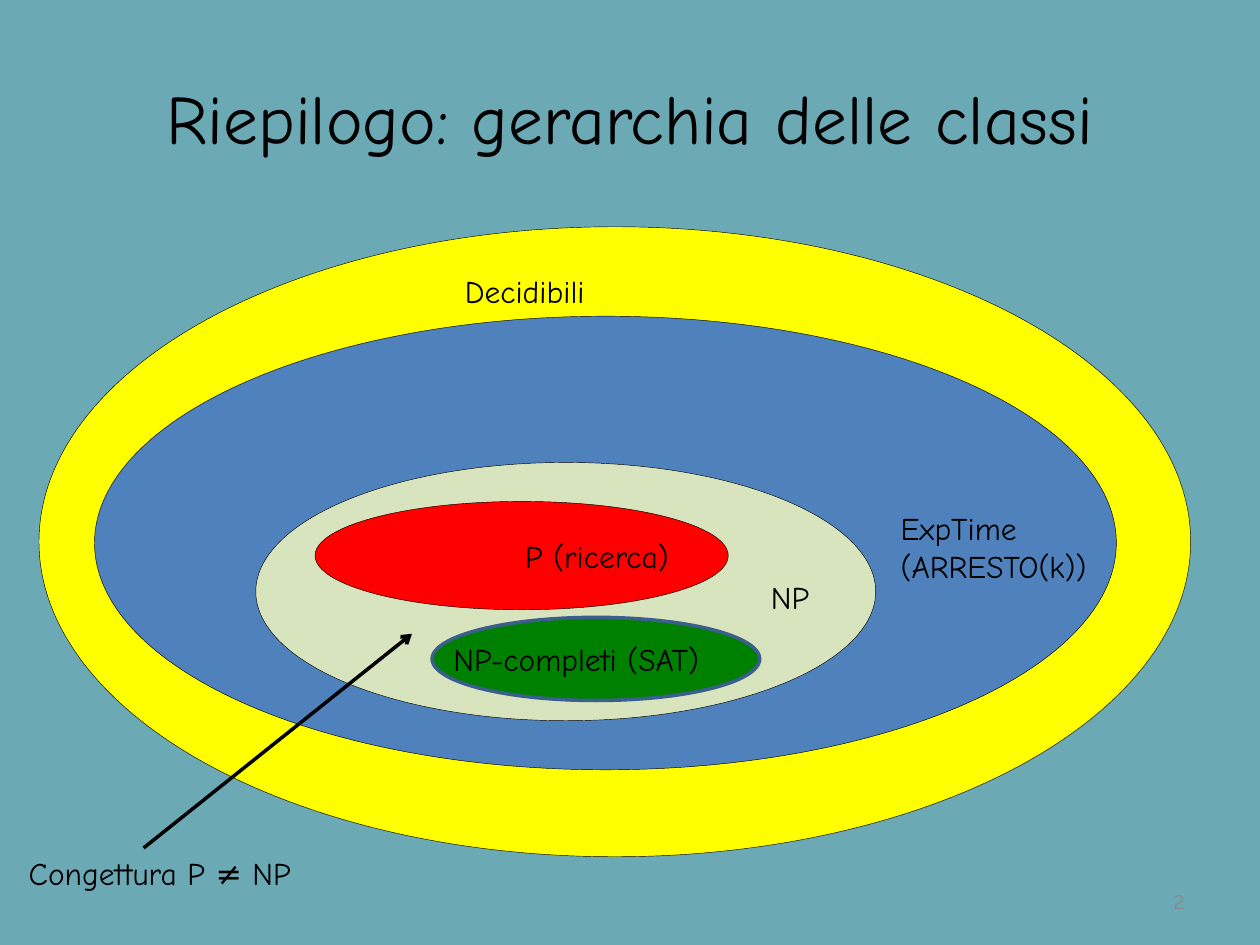
from dataclasses import dataclass

from lxml import etree
from pptx import Presentation
from pptx import util as u
from pptx.dml.color import RGBColor
from pptx.enum import shapes, text
from pptx.oxml.ns import qn


@dataclass(frozen=True)
class Theme:
    font: str = "Comic Neue"
    background: str = "6BA9B5"
    ink: str = "000000"
    muted: str = "898989"
    decidable: str = "FFFF00"
    exptime: str = "4F81BD"
    np: str = "D7E4BD"
    p: str = "FF0000"
    np_complete: str = "008000"
    np_complete_edge: str = "3A5F8C"
    title_size: float = 39.6
    label_size: float = 18
    number_size: float = 12
    thin: float = 0.25
    thick: float = 2


@dataclass(frozen=True)
class Box:
    left: float
    top: float
    width: float
    height: float

    def emu(self) -> tuple:
        return tuple(map(u.Inches, (self.left, self.top, self.width, self.height)))


THEME = Theme()


@dataclass(frozen=True)
class ClassSet:
    box: Box
    fill: str
    edge: str = THEME.ink
    edge_width: float = THEME.thin


@dataclass(frozen=True)
class Label:
    box: Box
    lines: tuple[str, ...]
    size: float = THEME.label_size
    color: str = THEME.ink
    align: text.PP_ALIGN = text.PP_ALIGN.LEFT
    anchor: text.MSO_ANCHOR = text.MSO_ANCHOR.TOP


# Nested sets, outermost first
CLASS_SETS = (
    ClassSet(Box(0.31, 1.8, 9.14, 5), THEME.decidable),
    ClassSet(Box(0.75, 2.51, 8.11, 3.6), THEME.exptime),
    ClassSet(Box(2.03, 3.67, 4.92, 2.05), THEME.np),
    ClassSet(Box(2.5, 3.98, 3.28, 0.86), THEME.p),
    ClassSet(Box(3.43, 4.9, 2.6, 0.66), THEME.np_complete,
             THEME.np_complete_edge, THEME.thick),
)

TITLE = Label(Box(0.5, 0.3, 9, 1.25), ("Riepilogo: gerarchia delle classi",),
              THEME.title_size, align=text.PP_ALIGN.CENTER,
              anchor=text.MSO_ANCHOR.MIDDLE)

CLASS_LABELS = (
    Label(Box(3.59, 2.11, 1.41, 0.4), ("Decidibili",)),
    Label(Box(7.05, 3.99, 1.97, 0.71), ("ExpTime", "(ARRESTO(k))")),
    Label(Box(4.07, 4.21, 1.47, 0.4), ("P (ricerca)",)),
    Label(Box(6.02, 4.54, 1.33, 0.4), ("NP",)),
    Label(Box(3.5, 5.03, 2.77, 0.4), ("NP-completi (SAT)",)),
    Label(Box(0.13, 6.73, 2.37, 0.4), ("Congettura P ≠ NP",)),
)

PAGE_NUMBER = Label(Box(7.17, 6.95, 2.33, 0.4), ("2",), THEME.number_size,
                    THEME.muted, text.PP_ALIGN.RIGHT, text.MSO_ANCHOR.MIDDLE)


def rgb(color: str) -> RGBColor:
    return RGBColor.from_string(color)


def draw_set(slide, class_set: ClassSet) -> None:
    ellipse = slide.shapes.add_shape(shapes.MSO_SHAPE.OVAL, *class_set.box.emu())
    ellipse.shadow.inherit = False
    ellipse.fill.solid()
    ellipse.fill.fore_color.rgb = rgb(class_set.fill)
    ellipse.line.color.rgb = rgb(class_set.edge)
    ellipse.line.width = u.Pt(class_set.edge_width)


def draw_label(slide, label: Label) -> None:
    frame = slide.shapes.add_textbox(*label.box.emu()).text_frame
    frame.word_wrap = True
    frame.vertical_anchor = label.anchor
    for index, line in enumerate(label.lines):
        paragraph = frame.add_paragraph() if index else frame.paragraphs[0]
        paragraph.alignment = label.align
        run = paragraph.add_run()
        run.text = line
        run.font.name = THEME.font
        run.font.size = u.Pt(label.size)
        run.font.color.rgb = rgb(label.color)


def draw_arrow(slide, start: tuple[float, float], end: tuple[float, float]) -> None:
    arrow = slide.shapes.add_connector(
        shapes.MSO_CONNECTOR.STRAIGHT, *map(u.Inches, start + end))
    arrow.line.color.rgb = rgb(THEME.ink)
    arrow.line.width = u.Pt(THEME.thick)
    etree.SubElement(arrow.line._get_or_add_ln(), qn("a:tailEnd"), type="arrow")
    etree.SubElement(arrow._element.spPr, qn("a:effectLst"))


def main() -> None:
    deck = Presentation()
    deck.slide_width, deck.slide_height = u.Inches(10), u.Inches(7.5)
    slide = deck.slides.add_slide(deck.slide_layouts[6])
    slide.background.fill.solid()
    slide.background.fill.fore_color.rgb = rgb(THEME.background)

    # Title, then the sets with their names on top
    draw_label(slide, TITLE)
    for class_set in CLASS_SETS:
        draw_set(slide, class_set)
    for label in CLASS_LABELS:
        draw_label(slide, label)

    # The conjecture points into NP, outside P
    draw_arrow(slide, (1.14, 6.73), (3.27, 5.03))
    draw_label(slide, PAGE_NUMBER)

    deck.save("out.pptx")


if __name__ == "__main__":
    main()
